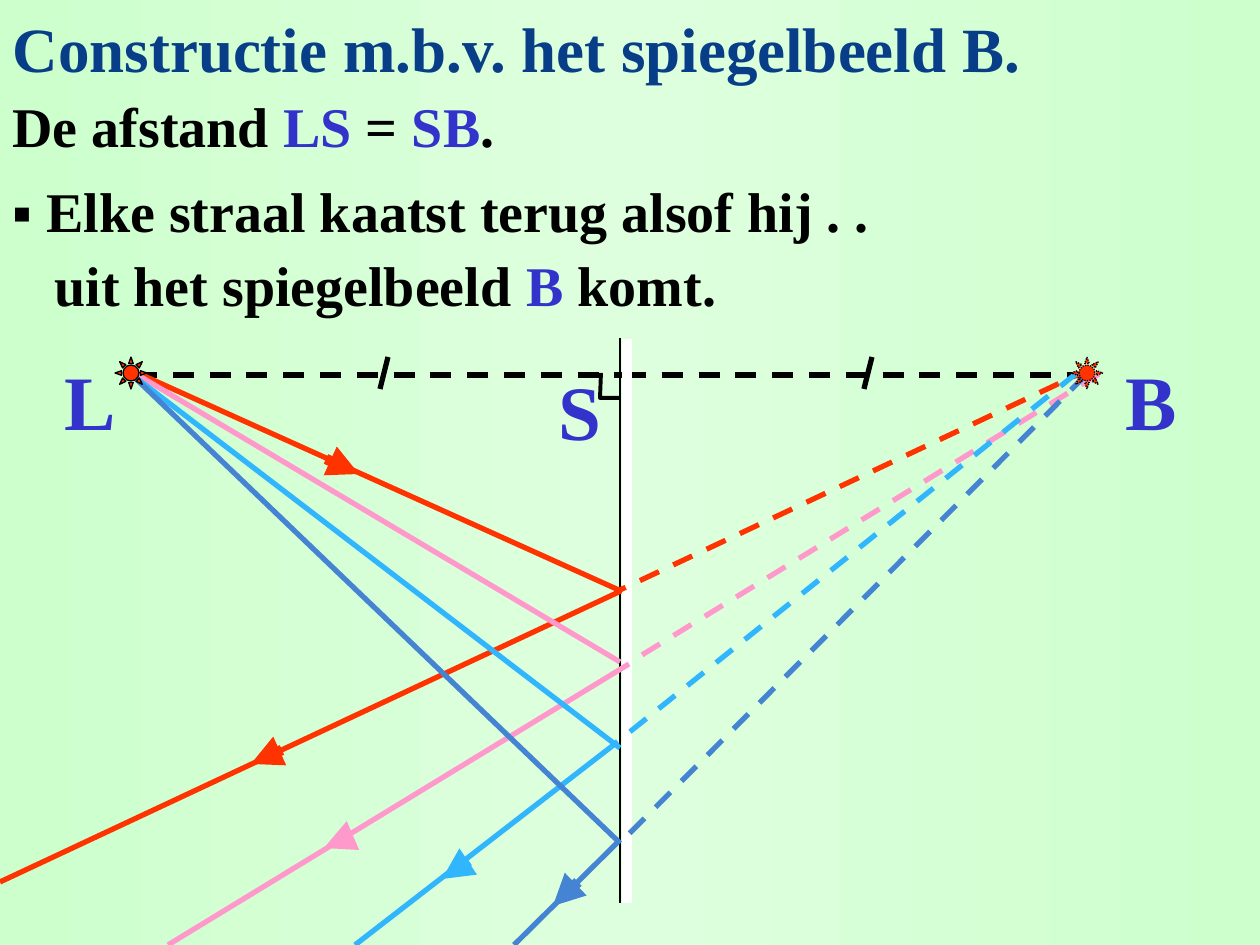
from copy import deepcopy

from pptx import Presentation
from pptx.dml.color import RGBColor
from pptx.enum.dml import MSO_LINE
from pptx.enum.shapes import MSO_CONNECTOR, MSO_SHAPE
from pptx.enum.text import MSO_ANCHOR, MSO_AUTO_SIZE, PP_ALIGN
from pptx.oxml.ns import qn
from pptx.util import Pt
from lxml.etree import SubElement

SCALE = 914400 // 126
BLACK, WHITE, NAVY, VIOLET = "000000", "FFFFFF", "073E87", "3333CC"
RED, PINK, SKY, BLUE = "FF3300", "FF99CC", "31B6FD", "4584D3"

RAYS = [
    (RED, (142, 37, 621, 253), (1092, 30, 620, 252), (621, 253, 0, 544),
     [(326, 121, 359, 136), (282, 412, 251, 426)]),
    (PINK, (136, 36, 620, 324), (1099, 36, 629, 325), (629, 326, 168, 607),
     [(338, 504, 324, 510)]),
    (SKY, (131, 36, 620, 410), (1077, 35, 611, 409), (611, 409, 355, 607),
     [(469, 523, 442, 541)]),
    (BLUE, (131, 36, 620, 505), (1086, 37, 620, 505), (620, 502, 514, 607),
     [(578, 544, 553, 568)]),
]


def px(num):
    """Turn pixels into EMU."""
    return num * SCALE


def tint(code):
    """Return the colour of a hex string."""
    return RGBColor.from_string(code)


def style(frame, parts, size):
    """Write coloured parts as one bold line of text."""
    para = frame.paragraphs[0]
    para.alignment = PP_ALIGN.LEFT
    for word, code in parts:
        run = para.add_run()
        run.text = word
        font = run.font
        font.name, font.size, font.bold = "Times New Roman", Pt(size), True
        font.color.rgb = tint(code)


def write(slide, box, parts, size, anchor=MSO_ANCHOR.MIDDLE, indent=0):
    """Add a text box with one line."""
    frame = slide.shapes.add_textbox(*map(px, box)).text_frame
    frame.word_wrap = True
    frame.vertical_anchor = anchor
    style(frame, parts, size)
    if indent:
        frame.paragraphs[0]._p.get_or_add_pPr().set("marL", str(px(indent)))


def draw(slide, box, ends, code, width=3, dash=False, head=False):
    """Add a straight line inside the box."""
    left, top = box
    x1, y1, x2, y2 = ends
    line = slide.shapes.add_connector(
        MSO_CONNECTOR.STRAIGHT,
        px(left + x1), px(top + y1), px(left + x2), px(top + y2))
    line.line.color.rgb = tint(code)
    line.line.width = Pt(width)
    if dash:
        line.line.dash_style = MSO_LINE.DASH
    if head:
        SubElement(line.line._get_or_add_ln(), qn("a:tailEnd"), type="triangle")
    SubElement(line._element.spPr, qn("a:effectLst"))


def paint(slide):
    """Fill the background with a green gradient."""
    fill = slide.background.fill
    fill.gradient()
    fill.gradient_angle = 0
    stops = slide.element.find(".//" + qn("a:gsLst"))
    stops.append(deepcopy(stops[0]))
    for stop, code, pos in zip(
            fill.gradient_stops, ("CCFFCC", "DEFFDE", "CCFFCC"), (0, 0.5, 1)):
        stop.color.rgb = tint(code)
        stop.position = pos


def head(slide, box):
    """Place the title in the box."""
    title = slide.shapes.title
    title.left, title.top, title.width, title.height = map(px, box)
    frame = title.text_frame
    frame.word_wrap = True
    frame.auto_size = MSO_AUTO_SIZE.NONE
    frame.vertical_anchor = MSO_ANCHOR.MIDDLE
    style(frame, [("Constructie m.b.v. het spiegelbeeld B.", NAVY)], 36)


def body(slide, box):
    """Place the three lines of explanation."""
    left, top, wide = box
    write(slide, (left, top, wide, 73),
          [("De afstand ", BLACK), ("LS", VIOLET), (" = ", BLACK),
           ("SB", VIOLET), (".", BLACK)], 32)
    write(slide, (left, top + 79, wide, 84),
          [("▪ Elke straal kaatst terug alsof hij . .", BLACK)], 32)
    write(slide, (left, top + 153, wide, 84),
          [("uit het spiegelbeeld ", BLACK), ("B", VIOLET),
           (" komt.", BLACK)], 32, indent=42)


def lamp(slide, box, spot, dotted=False):
    """Add a small red sun inside the box."""
    sun = slide.shapes.add_shape(
        MSO_SHAPE.SUN, px(box[0] + spot[0]), px(box[1] + spot[1]), px(32), px(32))
    sun.adjustments[0] = 0.25
    sun.shadow.inherit = False
    sun.fill.solid()
    sun.fill.fore_color.rgb = tint(RED)
    sun.line.color.rgb = tint(BLACK)
    sun.line.width = Pt(0.75)
    if dotted:
        sun.line.dash_style = MSO_LINE.ROUND_DOT


def angle(slide, box):
    """Mark the right angle at S."""
    left, top = box
    form = slide.shapes.build_freeform(left + 601, top + 35, scale=SCALE)
    form.add_line_segments([(left + 600, top + 60), (left + 619, top + 60)], close=False)
    mark = form.convert_to_shape()
    mark.shadow.inherit = False
    mark.fill.background()
    mark.line.color.rgb = tint(BLACK)
    mark.line.width = Pt(2.25)


def scene(slide, box):
    """Draw the mirror, the rays and the named points."""
    left, top = box
    for start, end, tick in ((136, 622, 380), (625, 1092, 864)):
        draw(slide, box, (start, 37, end, 37), BLACK, dash=True)
        draw(slide, box, (tick + 8, 19, tick, 51), BLACK)
    draw(slide, box, (620, 0, 620, 565), BLACK, 0.75)
    draw(slide, box, (627, 1, 627, 565), WHITE, 6)
    for code, ray, ghost, back, tips in RAYS:
        draw(slide, box, ghost, code, dash=True)
        draw(slide, box, back, code)
        draw(slide, box, ray, code)
        for tip in tips:
            draw(slide, box, tip, code, 6, head=True)
    lamp(slide, box, (1071, 19), dotted=True)
    lamp(slide, box, (115, 19))
    for name, x, y, wide in (("L", 52, 9, 77), ("S", 546, 19, 94), ("B", 1113, 9, 84)):
        write(slide, (left + x, top + y, wide, 105), [(name, VIOLET)], 44, MSO_ANCHOR.TOP)
    angle(slide, box)


def main():
    """Build and save the slide."""
    deck = Presentation()
    deck.slide_width, deck.slide_height = px(1260), px(945)
    slide = deck.slides.add_slide(deck.slide_layouts[5])
    paint(slide)
    head(slide, (0, 0, 1260, 95))
    body(slide, (0, 89, 1260))
    scene(slide, (0, 338))
    deck.save("out.pptx")


if __name__ == "__main__":
    main()
